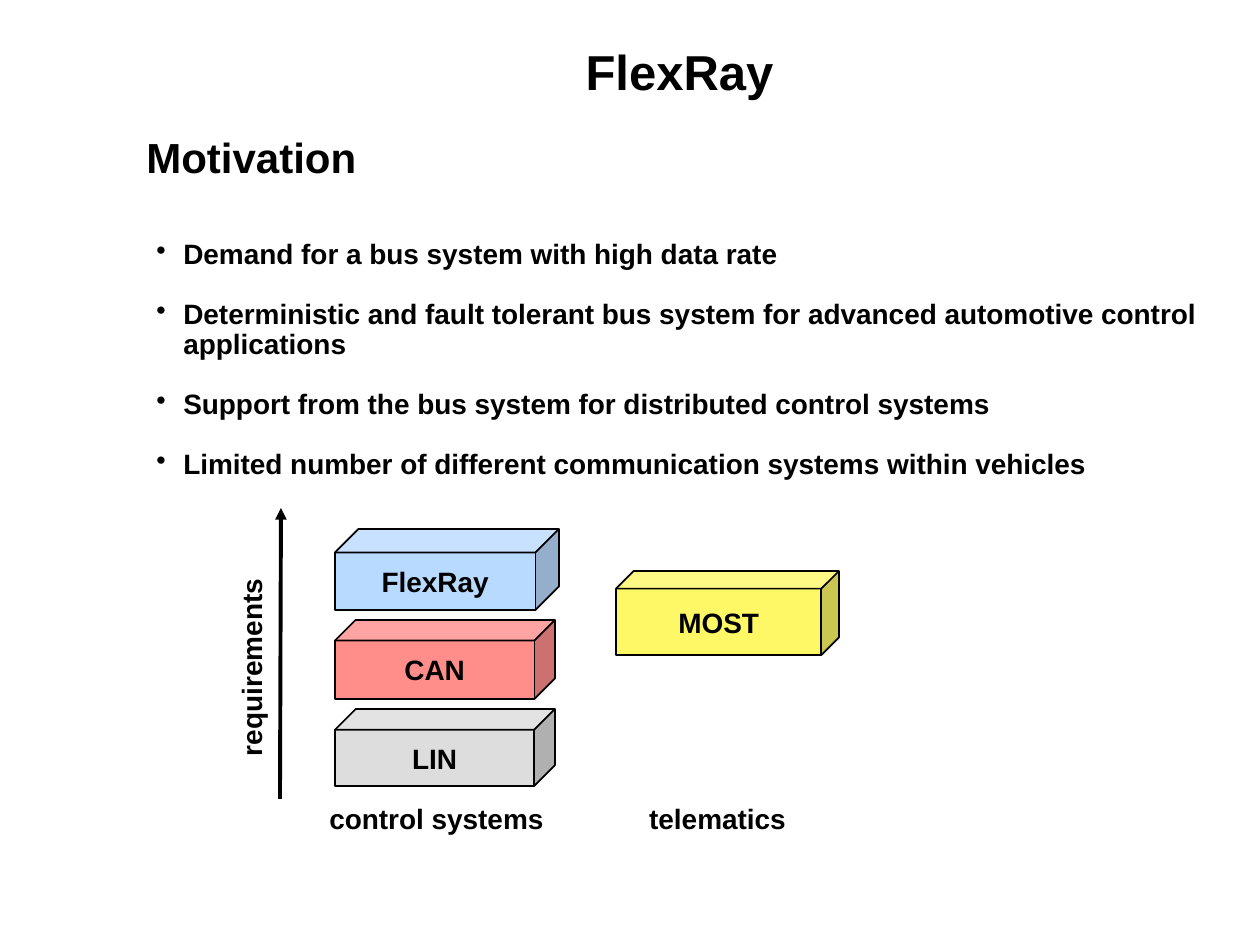
from pptx import Presentation
from pptx.dml.color import RGBColor
from pptx.enum.shapes import MSO_CONNECTOR, MSO_SHAPE
from pptx.enum.text import MSO_ANCHOR as Anchor, PP_ALIGN as Align
from pptx.oxml.ns import qn
from pptx.util import Pt
from lxml.etree import SubElement

EMU_PER_PX = 914400 / 126
BLACK = RGBColor(0x00, 0x00, 0x00)
WHITE = RGBColor(0xFF, 0xFF, 0xFF)
GREY = RGBColor(0xDD, 0xDD, 0xDD)
RED = RGBColor(0xFF, 0x8E, 0x8B)
YELLOW = RGBColor(0xFE, 0xF7, 0x66)
BLUE = RGBColor(0xB9, 0xDA, 0xFF)

FONT = {"name": "Arial", "bold": True}
HANGING = 27
BULLETS = [
    "Demand for a bus system with high data rate",
    "Deterministic and fault tolerant bus system for advanced automotive control applications",
    "Support from the bus system for distributed control systems",
    "Limited number of different communication systems within vehicles",
]
BUSES = [
    ("LIN", (335, 709, 220, 77), 0.27, GREY),
    ("CAN", (335, 620, 220, 79), 0.26, RED),
    ("MOST", (616, 571, 223, 84), 0.21, YELLOW),
    ("FlexRay", (335, 529, 224, 81), 0.29, BLUE),
]
LABELS = [
    ("requirements", (150, 644, 203, 47), 270),
    ("telematics", (633, 795, 169, 47), 0),
    ("control systems", (316, 795, 241, 47), 0),
]


def px(value):
    return round(value * EMU_PER_PX)


def box(values):
    return [px(value) for value in values]


def set_values(target, values):
    for name, value in values.items():
        setattr(target, name, value)


def format_paragraph(paragraph, size, **values):
    set_values(paragraph, values)
    set_values(paragraph.font, {**FONT, "size": Pt(size)})
    paragraph.font.color.rgb = BLACK


def write(shape, text, size, align, anchor, wrap):
    set_values(shape.text_frame, {"text": text, "vertical_anchor": anchor, "word_wrap": wrap})
    format_paragraph(shape.text_frame.paragraphs[0], size, alignment=align)


def add_title(slide, text):
    title = slide.shapes.title
    set_values(title, dict(zip(("left", "top", "width", "height"), box((233, 35, 893, 72)))))
    write(title, text, 28, Align.CENTER, Anchor.MIDDLE, True)


def add_heading(slide, text):
    heading = slide.shapes.add_shape(MSO_SHAPE.RECTANGLE, *box((134, 130, 262, 58)))
    heading.shadow.inherit = False
    heading.fill.solid()
    heading.fill.fore_color.rgb = WHITE
    heading.line.fill.background()
    write(heading, text, 24, Align.LEFT, Anchor.BOTTOM, True)


def add_bullets(slide, texts):
    frame = slide.shapes.add_textbox(*box((144, 234, 1085, 256))).text_frame
    frame.word_wrap = True
    for index, text in enumerate(texts):
        paragraph = frame.paragraphs[0] if index == 0 else frame.add_paragraph()
        paragraph.text = text
        properties = paragraph._p.get_or_add_pPr()
        properties.set("marL", str(px(HANGING)))
        properties.set("indent", str(-px(HANGING)))
        SubElement(properties, qn("a:buChar")).set("char", "•")
        format_paragraph(paragraph, 16, line_spacing=0.9, space_before=Pt(17 if index else 0))


def add_label(slide, text, area, rotation):
    label = slide.shapes.add_textbox(*box(area))
    label.rotation = rotation
    write(label, text, 16, Align.CENTER, Anchor.TOP, False)


def add_bus(slide, text, area, depth, color):
    cube = slide.shapes.add_shape(MSO_SHAPE.CUBE, *box(area))
    cube.shadow.inherit = False
    cube.adjustments[0] = depth
    cube.fill.solid()
    cube.fill.fore_color.rgb = color
    cube.line.color.rgb = BLACK
    cube.line.width = Pt(1)
    write(cube, text, 16, Align.CENTER, Anchor.MIDDLE, False)


def add_axis(slide):
    axis = slide.shapes.add_connector(MSO_CONNECTOR.STRAIGHT, *box((280, 799, 281, 508)))
    axis.line.color.rgb = BLACK
    axis.line.width = Pt(2.25)
    SubElement(axis.line._get_or_add_ln(), qn("a:tailEnd")).set("type", "triangle")
    SubElement(axis._element.spPr, qn("a:effectLst"))


def main():
    presentation = Presentation()
    set_values(presentation, {"slide_width": px(1260), "slide_height": px(945)})
    slide = presentation.slides.add_slide(presentation.slide_layouts[5])
    add_title(slide, "FlexRay")
    add_bullets(slide, BULLETS)
    add_heading(slide, "Motivation")
    add_axis(slide)
    for label in LABELS:
        add_label(slide, *label)
    for bus in BUSES:
        add_bus(slide, *bus)
    presentation.save("out.pptx")


if __name__ == "__main__":
    main()
